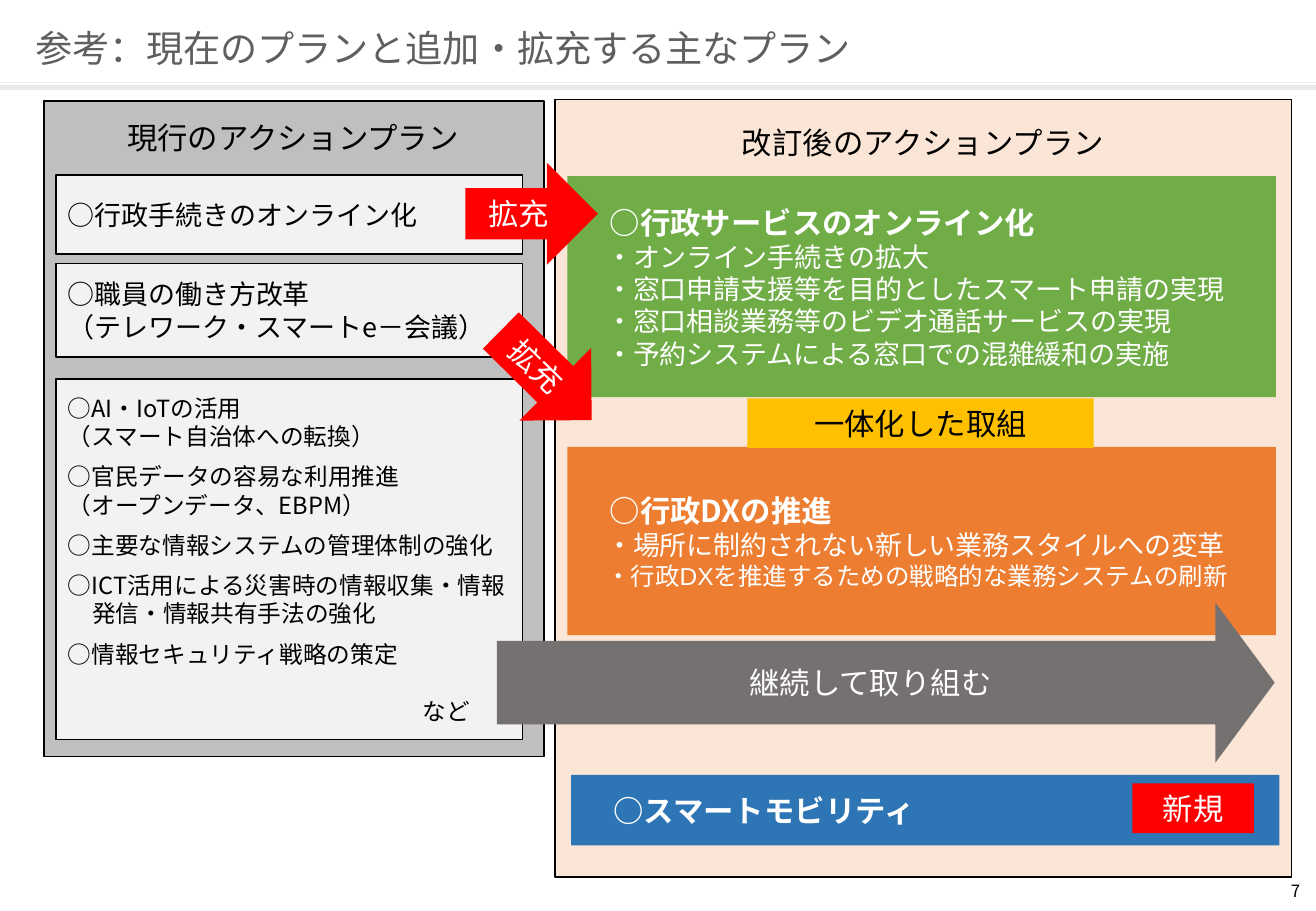
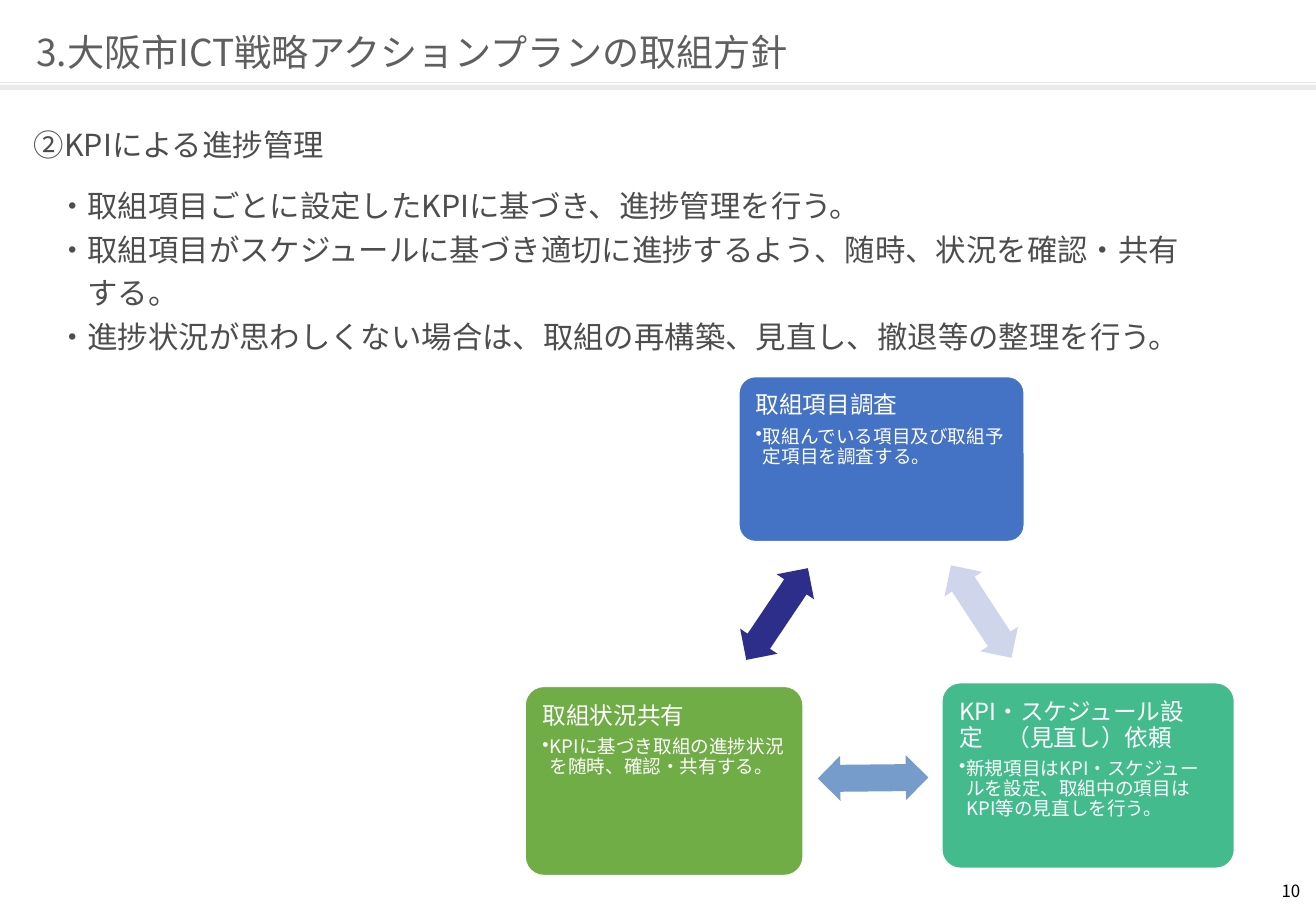
"""Build two slides on the revised ICT action plan and its KPI management."""
from dataclasses import dataclass
from typing import Any, NamedTuple

from lxml.etree import SubElement
from pptx import Presentation
from pptx.dml.color import RGBColor
from pptx.enum.shapes import MSO_CONNECTOR, MSO_SHAPE
from pptx.enum.text import MSO_ANCHOR, MSO_AUTO_SIZE, PP_ALIGN
from pptx.oxml.ns import qn
from pptx.shapes.autoshape import Shape
from pptx.slide import Slide
from pptx.text.text import TextFrame
from pptx.util import Inches, Pt

FONT = "Noto Sans CJK JP"
WIDTH, HEIGHT = 10.83, 7.5
COLORS = {
    "black": "000000", "white": "FFFFFF", "title": "5F5F5F", "body": "4D4D4D",
    "rule": "EAEAEA", "peach": "FBE5D6", "gray": "BFBFBF", "pale": "F2F2F2",
    "green": "70AD47", "orange": "ED7D31", "red": "FF0000", "stone": "767171",
    "gold": "FFC000", "blue": "2E75B6", "royal": "4472C4", "teal": "43BB8D",
    "lavender": "CFD5EA", "steel": "759CCB", "navy": "2D2D8A",
}


class Box(NamedTuple):
    left: float
    top: float
    width: float
    height: float


@dataclass(frozen=True)
class Panel:
    box: Box
    fill: str
    lines: tuple[dict[str, Any], ...] = ()
    geometry: MSO_SHAPE = MSO_SHAPE.RECTANGLE
    outline: str | None = None
    adjustments: tuple[float, ...] = ()
    rotation: float = 0
    anchor: MSO_ANCHOR = MSO_ANCHOR.MIDDLE
    inset: tuple[float, float] = (0.1, 0.05)


def rgb(name: str) -> RGBColor:
    return RGBColor.from_string(COLORS[name])


def line(text: str, **style: Any) -> dict[str, Any]:
    return {"text": text, **style}


def label(text: str, color: str = "white") -> tuple[dict[str, Any], ...]:
    return (line(text, color=color, align=PP_ALIGN.CENTER),)


def write(frame: TextFrame, text: str, *, size: float = 18, color: str = "black",
          bold: bool = False, font: str = FONT, align: PP_ALIGN = PP_ALIGN.LEFT,
          indent: float = 0, hang: float = 0, before: float = 0, after: float = 0,
          spacing: float = 1.0, bullet: str = "") -> None:
    paragraph = frame.add_paragraph() if frame.text else frame.paragraphs[0]
    paragraph.alignment = align
    paragraph.line_spacing = spacing
    paragraph.space_before, paragraph.space_after = Pt(before), Pt(after)
    properties = paragraph._p.get_or_add_pPr()
    properties.set("marL", str(Inches(indent)))
    properties.set("indent", str(Inches(-hang)))
    if bullet:
        SubElement(properties, qn("a:buChar"), char=bullet)
    else:
        SubElement(properties, qn("a:buNone"))
    run = paragraph.add_run()
    run.text = text
    run.font.size, run.font.bold, run.font.name = Pt(size), bold, font
    run.font.color.rgb = rgb(color)
    SubElement(run._r.get_or_add_rPr(), qn("a:ea"), typeface=font)


def place(shape: Shape, box: Box) -> None:
    shape.left, shape.top, shape.width, shape.height = map(Inches, box)


def set_frame(shape: Shape, anchor: MSO_ANCHOR,
              inset: tuple[float, float] = (0, 0)) -> TextFrame:
    frame = shape.text_frame
    frame.word_wrap = True
    frame.auto_size = MSO_AUTO_SIZE.NONE
    frame.vertical_anchor = anchor
    frame.margin_left = frame.margin_right = Inches(inset[0])
    frame.margin_top = frame.margin_bottom = Inches(inset[1])
    return frame


def add_panel(slide: Slide, panel: Panel) -> None:
    shape = slide.shapes.add_shape(panel.geometry, *map(Inches, panel.box))
    shape.shadow.inherit = False
    shape.rotation = panel.rotation
    for index, value in enumerate(panel.adjustments):
        shape.adjustments[index] = value
    shape.fill.solid()
    shape.fill.fore_color.rgb = rgb(panel.fill)
    if panel.outline:
        shape.line.color.rgb = rgb(panel.outline)
        shape.line.width = Pt(1)
    else:
        shape.line.fill.background()
    frame = set_frame(shape, panel.anchor, panel.inset)
    for entry in panel.lines:
        write(frame, **entry)


def add_caption(slide: Slide, box: Box, text: str,
                inset: tuple[float, float] = (0, 0), **style: Any) -> None:
    shape = slide.shapes.add_textbox(*map(Inches, box))
    write(set_frame(shape, MSO_ANCHOR.TOP, inset), text, **style)


def add_base(slide: Slide, title: str, title_box: Box, page: int,
             spacing: float = 1.0) -> None:
    rule = slide.shapes.add_connector(
        MSO_CONNECTOR.STRAIGHT, 0, Inches(0.68), Inches(WIDTH), Inches(0.68))
    rule.line.color.rgb = rgb("rule")
    rule.line.width = Pt(0.75)
    SubElement(rule._element.spPr, qn("a:effectLst"))
    add_panel(slide, Panel(Box(0, 0.7, WIDTH, 0.04), "rule"))
    heading = slide.shapes.title
    place(heading, title_box)
    write(set_frame(heading, MSO_ANCHOR.MIDDLE), title,
          size=22, color="title", spacing=spacing)
    add_caption(slide, Box(8.17, 7.25, 2.53, 0.2), str(page),
                size=10, align=PP_ALIGN.RIGHT)


def current_plan(top: float, height: float, *lines: dict[str, Any]) -> Panel:
    return Panel(Box(0.46, top, 3.84, height), "pale", lines, outline="black")


def revised_plan(box: Box, fill: str, heading: str,
                 *items: dict[str, Any]) -> Panel:
    head = line(heading, color="white", bold=True, indent=0.25)
    return Panel(box, fill, (head, *items))


def measure(text: str, **style: Any) -> dict[str, Any]:
    return line(text, **{"size": 16, "color": "white", "indent": 0.22, **style})


def expansion(box: Box, rotation: float = 0) -> Panel:
    return Panel(box, "red", label("拡充"), MSO_SHAPE.RIGHT_ARROW, rotation=rotation)


def step(box: Box, fill: str, heading: str, detail: str) -> Panel:
    lines = (
        line(heading, size=14, color="white", spacing=0.9, after=5),
        line(detail, size=11, color="white", spacing=0.9, after=1.5,
             indent=0.06, hang=0.06, bullet="•"),
    )
    return Panel(box, fill, lines, MSO_SHAPE.ROUNDED_RECTANGLE, "white", (0.1,),
                 anchor=MSO_ANCHOR.TOP, inset=(0.1, 0.1))


def link(left: float, top: float, fill: str, rotation: float) -> Panel:
    return Panel(Box(left, top, 0.91, 0.37), fill,
                 geometry=MSO_SHAPE.LEFT_RIGHT_ARROW,
                 adjustments=(0.6, 0.5), rotation=rotation)


def build_plan_comparison(slide: Slide) -> None:
    add_base(slide, "参考：現在のプランと追加・拡充する主なプラン",
             Box(0.29, 0.06, 10.42, 0.59), 7, spacing=1.2)
    panels = (
        Panel(Box(4.57, 0.82, 6.06, 6.4), "peach", outline="black"),
        Panel(Box(0.36, 0.83, 4.12, 5.4), "gray", outline="black"),
        current_plan(1.44, 0.65, line("○行政手続きのオンライン化", size=16)),
        current_plan(2.17, 0.77, line("○職員の働き方改革", size=16),
                     line("（テレワーク・スマートe－会議）", size=16)),
        current_plan(
            3.12, 2.97,
            line("○AI・IoTの活用", size=14),
            line("（スマート自治体への転換）", size=14),
            line("○官民データの容易な利用推進", size=14, before=7),
            line("（オープンデータ、EBPM）", size=14),
            line("○主要な情報システムの管理体制の強化", size=14, before=7),
            line("○ICT活用による災害時の情報収集・情報発信・情報共有手法の強化",
                 size=14, before=7, indent=0.2, hang=0.2),
            line("○情報セキュリティ戦略の策定", size=14, before=7),
            line("など", size=14, before=17, indent=2.92)),
        revised_plan(
            Box(4.67, 1.45, 5.83, 1.82), "green", "○行政サービスのオンライン化",
            measure("・オンライン手続きの拡大"),
            measure("・窓口申請支援等を目的としたスマート申請の実現"),
            measure("・窓口相談業務等のビデオ通話サービスの実現"),
            measure("・予約システムによる窓口での混雑緩和の実施")),
        revised_plan(
            Box(4.67, 3.68, 5.83, 1.55), "orange", "○行政DXの推進",
            measure("・場所に制約されない新しい業務スタイルへの変革"),
            measure("・行政DXを推進するための戦略的な業務システムの刷新",
                    size=14.5, font="Arial")),
        expansion(Box(3.83, 1.34, 1.09, 0.84)),
        expansion(Box(3.97, 2.67, 1.05, 0.84), rotation=44.6),
        Panel(Box(4.09, 4.96, 6.4, 1.32), "stone", label("継続して取り組む"),
              MSO_SHAPE.RIGHT_ARROW, adjustments=(0.52, 0.37)),
        Panel(Box(6.15, 3.28, 2.85, 0.41), "gold", label("一体化した取組", "black")),
        revised_plan(Box(4.7, 6.38, 5.83, 0.58), "blue", "○スマートモビリティ"),
        Panel(Box(9.32, 6.45, 1, 0.41), "red", label("新規")),
    )
    for panel in panels:
        add_panel(slide, panel)
    for box, text in (
        (Box(0.77, 0.93, 3.28, 0.4), "現行のアクションプラン"),
        (Box(4.7, 0.97, 5.79, 0.4), "改訂後のアクションプラン"),
    ):
        add_caption(slide, box, text, inset=(0.1, 0.05), align=PP_ALIGN.CENTER)


def build_kpi_management(slide: Slide) -> None:
    add_base(slide, "3.大阪市ICT戦略アクションプランの取組方針",
             Box(0.3, 0.21, 9.92, 0.43), 10)
    for panel in (
        step(Box(6.08, 3.1, 2.35, 1.36), "royal", "取組項目調査",
             "取組んでいる項目及び取組予定項目を調査する。"),
        link(7.62, 4.85, "lavender", 56.8),
        step(Box(7.75, 5.62, 2.41, 1.53), "teal",
             "KPI・スケジュール設定　（見直し）依頼",
             "新規項目はKPI・スケジュールを設定、取組中の項目はKPI等の見直しを行う。"),
        link(6.73, 6.22, "steel", 179.4),
        step(Box(4.32, 5.65, 2.29, 1.56), "green", "取組状況共有",
             "KPIに基づき取組の進捗状況を随時、確認・共有する。"),
        link(5.94, 4.87, "navy", 303.9),
    ):
        add_panel(slide, panel)
    add_caption(slide, Box(0.28, 0.92, 9.36, 0.42), "②KPIによる進捗管理",
                color="body", spacing=1.4, before=1.8)
    policies = slide.placeholders[1]
    place(policies, Box(0.47, 1.28, 9.4, 1.84))
    frame = set_frame(policies, MSO_ANCHOR.MIDDLE)
    for policy in (
        "・取組項目ごとに設定したKPIに基づき、進捗管理を行う。",
        "・取組項目がスケジュールに基づき適切に進捗するよう、随時、状況を確認・共有する。",
        "・進捗状況が思わしくない場合は、取組の再構築、見直し、撤退等の整理を行う。",
    ):
        write(frame, policy, color="body", spacing=1.2, indent=0.25, hang=0.25)


def main() -> None:
    deck = Presentation()
    deck.slide_width, deck.slide_height = Inches(WIDTH), Inches(HEIGHT)
    title_only, title_and_body = deck.slide_layouts[5], deck.slide_layouts[1]
    build_plan_comparison(deck.slides.add_slide(title_only))
    build_kpi_management(deck.slides.add_slide(title_and_body))
    deck.save("out.pptx")


if __name__ == "__main__":
    main()
